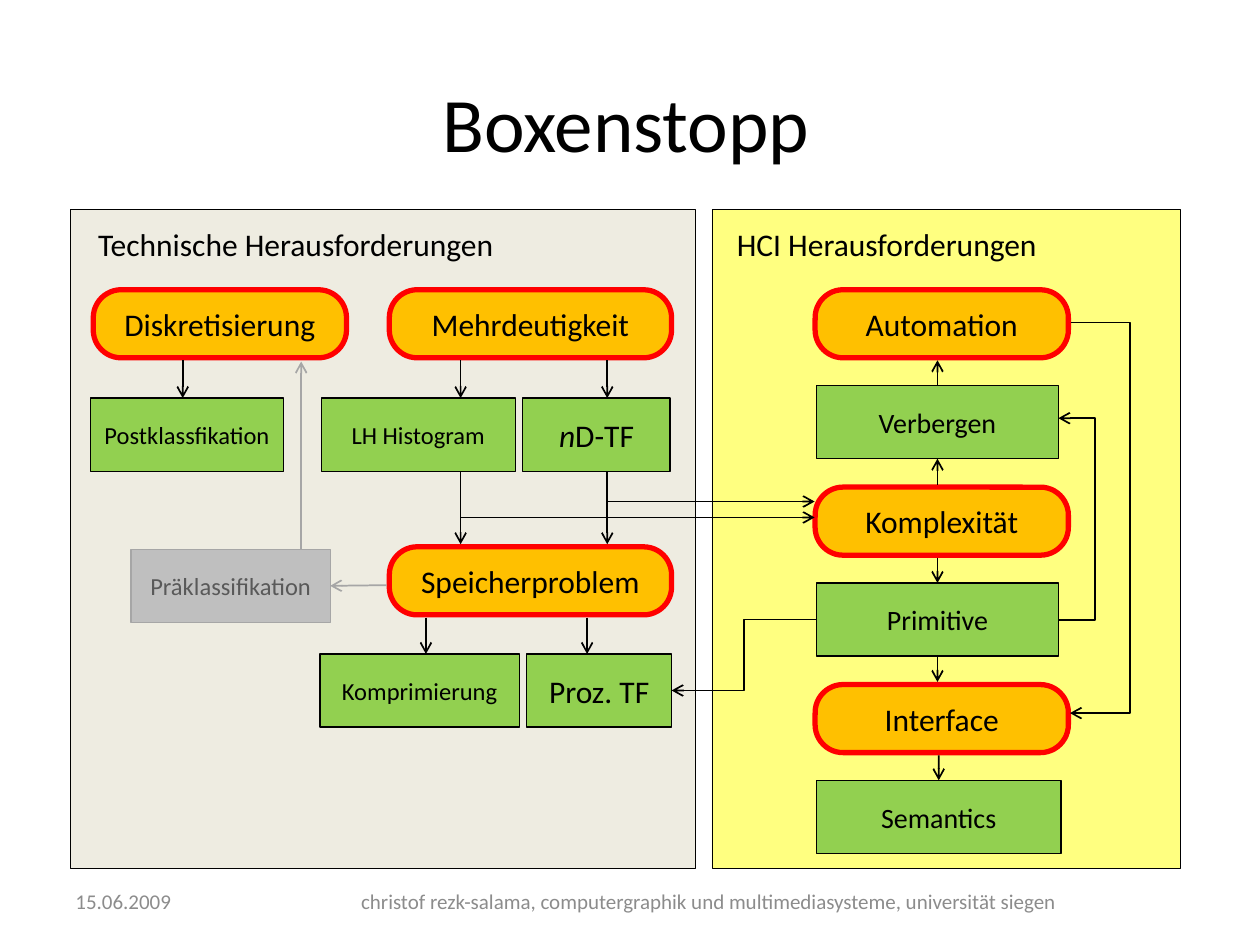
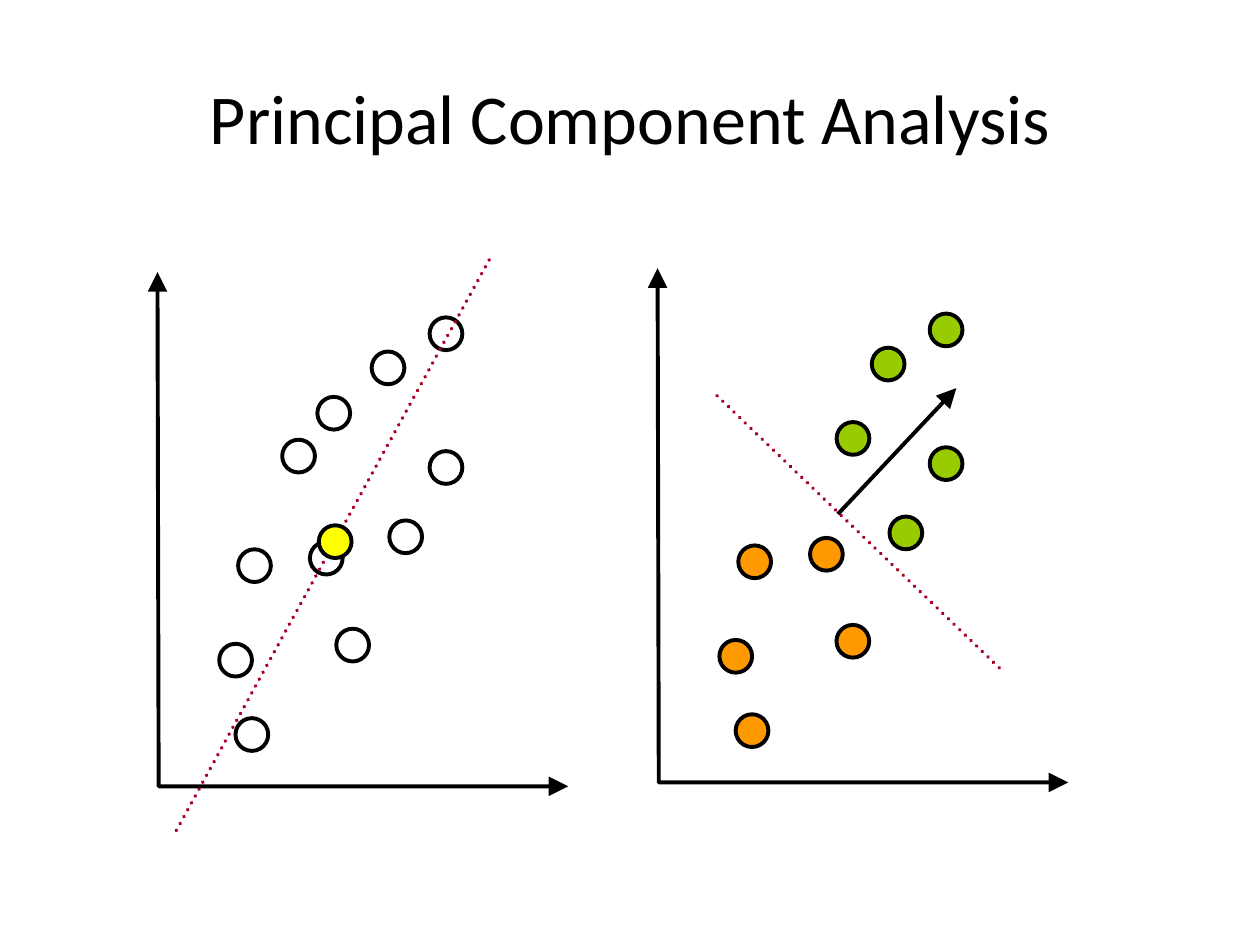
from dataclasses import dataclass
from typing import Optional, Union

from lxml import etree
from pptx import Presentation
from pptx.dml.color import RGBColor
from pptx.enum.dml import MSO_LINE
from pptx.enum.shapes import MSO_CONNECTOR as Conn, MSO_SHAPE as Geo
from pptx.enum.text import MSO_ANCHOR as Anchor, PP_ALIGN as Align
from pptx.oxml.ns import qn
from pptx.util import Pt

FONT = "Calibri"
BLACK = RGBColor(0x00, 0x00, 0x00)
WHITE = RGBColor(0xFF, 0xFF, 0xFF)
RED = RGBColor(0xFF, 0x00, 0x00)
AMBER = RGBColor(0xFF, 0xC0, 0x00)
GREEN = RGBColor(0x92, 0xD0, 0x50)
BEIGE = RGBColor(0xEE, 0xEC, 0xE1)
PALE_YELLOW = RGBColor(0xFF, 0xFF, 0x80)
SILVER = RGBColor(0xBF, 0xBF, 0xBF)
GREY = RGBColor(0xA6, 0xA6, 0xA6)
DARK_GREY = RGBColor(0x59, 0x59, 0x59)
FOOTER_GREY = RGBColor(0x8C, 0x8C, 0x8C)
CRIMSON = RGBColor(0xA5, 0x00, 0x21)
YELLOW = RGBColor(0xFF, 0xFF, 0x00)
LIME = RGBColor(0x99, 0xCC, 0x00)
ORANGE = RGBColor(0xFF, 0x99, 0x00)

TOP, LEFT, BOTTOM, RIGHT = range(4)
Point = tuple[float, float]
Rect = tuple[float, float, float, float]


@dataclass(frozen=True)
class Style:
    geo: Geo
    height: float
    fill: RGBColor
    line: RGBColor
    weight: float
    color: RGBColor = BLACK


PROBLEM = Style(Geo.ROUNDED_RECTANGLE, 38.9, AMBER, RED, 3)
METHOD = Style(Geo.RECTANGLE, 41.8, GREEN, BLACK, 0.75)
FADED = Style(Geo.RECTANGLE, 41.8, SILVER, GREY, 0.75, DARK_GREY)


@dataclass(frozen=True)
class Box:
    text: str
    x: float
    y: float
    w: float
    style: Style
    size: float = 18
    italic: str = ""  # leading letters set in italics


@dataclass(frozen=True)
class Side:
    box: str
    site: int


@dataclass(frozen=True)
class Arrow:
    start: Union[Point, Side]
    end: Union[Point, Side]
    color: RGBColor = BLACK
    kind: Conn = Conn.STRAIGHT


# Rows and columns of the diagram
ROW_1, ROW_2, ROW_3, ROW_4 = 165.6, 227.5, 312.5, 373.7
HCI_X, HCI_MID, HCI_STEP, HCI_METHOD_Y = 466.6, 535.7, 112.8, 220.3
LH_X, ND_X = 263.2, 347

BOXES = [
    Box("Diskretisierung", 53.3, ROW_1, 144.7, PROBLEM),
    Box("Mehrdeutigkeit", 222.5, ROW_1, 161.3, PROBLEM),
    Box("Speicherproblem", 222.5, ROW_3, 161.3, PROBLEM),
    Box("Postklassfikation", 51.8, ROW_2, 110.2, METHOD, 14),
    Box("LH Histogram", 183.6, ROW_2, 110.9, METHOD, 14),
    Box("D-TF", 298.8, ROW_2, 84.2, METHOD, italic="n"),
    Box("Präklassifikation", 74.9, 313.9, 113.8, FADED, 14),
    Box("Komprimierung", 182.9, ROW_4, 113.8, METHOD, 14),
    Box("Proz. TF", 301, ROW_4, 82.8, METHOD),
] + [
    Box(text, 465.8, ROW_1 + i * HCI_STEP, 144.7, PROBLEM)
    for i, text in enumerate(["Automation", "Komplexität", "Interface"])
] + [
    Box(text, HCI_X, HCI_METHOD_Y + i * HCI_STEP, w, METHOD, 16)
    for i, (text, w) in enumerate([("Verbergen", 138.2), ("Primitive", 138.2),
                                   ("Semantics", 139.7)])
]

ARROWS = [
    Arrow((x, y1), (x, y2)) for x, y1, y2 in [
        (104.4, 205.9, ROW_2), (LH_X, 205.9, ROW_2), (ND_X, 205.9, ROW_2),
        (LH_X, 269.3, 311), (ND_X, 269.3, 311),
        (243.4, 353, ROW_4), (335.5, 353, ROW_4)]
] + [
    Arrow((172.1, 313.9), (172.1, 206.6), GREY),
    Arrow((221, 334.4), Side("Präklassifikation", RIGHT), GREY),
    Arrow((ND_X, 286.6), (465.5, 286.6)),
    Arrow((LH_X, 295.7), (465.5, 295.7)),
    Arrow(Side("Verbergen", TOP), (HCI_MID, 205.9)),
    Arrow((HCI_MID, 277), Side("Verbergen", BOTTOM)),
    Arrow((HCI_MID, 318.7), Side("Primitive", TOP)),
    Arrow(Side("Primitive", BOTTOM), (HCI_MID, 389.7)),
    Arrow((536.4, 431.6), Side("Semantics", TOP)),
    Arrow(Side("Primitive", LEFT), Side("Proz. TF", RIGHT), kind=Conn.ELBOW),
]

# Routes around the right of the HCI column
LOOPS: list[list[Point]] = [
    [(612, 184.3), (645.8, 184.3), (645.8, 407.5), (611.5, 407.5)],
    [(604.8, 354.2), (625.7, 354.2), (625.7, 239), (604.8, 239)],
]

# Scatter plots: both share axes and most samples
DOT = 18.7
PLOT_SHIFT: Point = (285.8, -2.2)
AXES: list[Point] = [(90, 155.5), (90.7, 449.3), (324.7, 449.3)]
UPPER: list[Point] = [(212.4, 200.9), (245.5, 181.4), (245.5, 257.8), (222.5, 297.4)]
LOWER: list[Point] = [(177.1, 309.6), (136.1, 313.9), (134.6, 410.4),
                      (125.3, 367.9), (192.2, 359.3)]
LEFT_ONLY: list[Point] = [(181.4, 226.8), (161.3, 251.3)]
RIGHT_ONLY: list[Point] = [(192.3, 243.4)]
MEAN: Point = (182.2, 300.2)


def add_run(p, text: str, size: float, color: RGBColor, italic: bool = False) -> None:
    r = p.add_run()
    r.text = text
    r.font.name, r.font.size, r.font.italic = FONT, Pt(size), italic
    r.font.color.rgb = color


def set_line(sp, color: RGBColor, weight: float, head: Optional[str] = None,
             tail: Optional[str] = None, dotted: bool = False) -> None:
    sp.line.color.rgb = color
    sp.line.width = Pt(weight)
    ln = sp._element.spPr.find(qn("a:ln"))
    if dotted:
        sp.line.dash_style = MSO_LINE.ROUND_DOT
        ln.set("cap", "rnd")
    for tag, end in (("a:headEnd", head), ("a:tailEnd", tail)):
        if end:
            size = "lg" if end == "triangle" else "med"
            etree.SubElement(ln, qn(tag), type=end, w=size, len=size)


def add_title(s, text: str, x: float, y: float, size: float) -> None:
    sp = s.shapes.title
    sp.left, sp.top, sp.width, sp.height = Pt(x), Pt(y), Pt(648), Pt(90)
    sp.text_frame.vertical_anchor = Anchor.MIDDLE
    p = sp.text_frame.paragraphs[0]
    p.alignment = Align.CENTER
    add_run(p, text, size, BLACK)


def add_label(s, text: str, rect: Rect, size: float, color: RGBColor,
              align: Align = Align.LEFT, anchor: Anchor = Anchor.TOP) -> None:
    tf = s.shapes.add_textbox(*map(Pt, rect)).text_frame
    tf.word_wrap, tf.vertical_anchor = True, anchor
    p = tf.paragraphs[0]
    p.alignment = align
    add_run(p, text, size, color)


def add_filled(s, geo: Geo, rect: Rect, fill: RGBColor, line: RGBColor, weight: float):
    sp = s.shapes.add_shape(geo, *map(Pt, rect))
    sp.shadow.inherit = False
    sp.fill.solid()
    sp.fill.fore_color.rgb = fill
    set_line(sp, line, weight)
    return sp


def add_box(s, box: Box):
    st = box.style
    sp = add_filled(s, st.geo, (box.x, box.y, box.w, st.height),
                    st.fill, st.line, st.weight)
    if st.geo == Geo.ROUNDED_RECTANGLE:
        sp.adjustments[0] = 0.41
    tf = sp.text_frame
    tf.margin_left = tf.margin_right = Pt(2)
    tf.word_wrap, tf.vertical_anchor = True, Anchor.MIDDLE
    p = tf.paragraphs[0]
    p.alignment = Align.CENTER
    if box.italic:
        add_run(p, box.italic, box.size, st.color, italic=True)
    add_run(p, box.text, box.size, st.color)
    return sp


def add_line(s, start: Point, end: Point, kind: Conn = Conn.STRAIGHT):
    c = s.shapes.add_connector(kind, *map(Pt, (*start, *end)))
    etree.SubElement(c._element.spPr, qn("a:effectLst"))
    return c


def add_arrow(s, arrow: Arrow, shapes: dict) -> None:
    start, end = (e if isinstance(e, tuple) else (0, 0) for e in (arrow.start, arrow.end))
    c = add_line(s, start, end, arrow.kind)
    if isinstance(arrow.start, Side):
        c.begin_connect(shapes[arrow.start.box], arrow.start.site)
    if isinstance(arrow.end, Side):
        c.end_connect(shapes[arrow.end.box], arrow.end.site)
    set_line(c, arrow.color, 1, tail="arrow")


def add_path(s, points: list[Point], weight: float, tail: str,
             head: Optional[str] = None) -> None:
    pts = [(Pt(x), Pt(y)) for x, y in points]
    fb = s.shapes.build_freeform(*pts[0])
    fb.add_line_segments(pts[1:], close=False)
    sp = fb.convert_to_shape()
    sp.shadow.inherit = False
    sp.fill.background()
    set_line(sp, BLACK, weight, head, tail)


def add_dots(s, points: list[Point], fill: RGBColor, shift: Point = (0, 0)) -> None:
    for x, y in points:
        add_filled(s, Geo.OVAL, (x + shift[0], y + shift[1], DOT, DOT), fill, BLACK, 2.25)


def add_axes(s, shift: Point = (0, 0)) -> None:
    add_path(s, [(x + shift[0], y + shift[1]) for x, y in AXES],
             2.25, "triangle", "triangle")


def add_dotted(s, start: Point, end: Point) -> None:
    set_line(add_line(s, start, end), CRIMSON, 2.25, dotted=True)


def build_overview(s) -> None:
    add_title(s, "Boxenstopp", 33.8, 24.5, 44)
    # Footer
    add_label(s, "15.06.2009", (36, 500.4, 138.2, 28.8), 12, FOOTER_GREY,
              anchor=Anchor.MIDDLE)
    add_label(s, "christof rezk-salama, computergraphik und multimediasysteme, "
              "universität siegen", (180, 500.4, 450, 28.8), 12, FOOTER_GREY,
              Align.CENTER, Anchor.MIDDLE)
    # Panels with headings
    for text, x, w, text_x, fill in [
            ("Technische Herausforderungen", 40.3, 357.1, 49, BEIGE),
            ("HCI Herausforderungen", 406.8, 267.8, 414, PALE_YELLOW)]:
        add_filled(s, Geo.RECTANGLE, (x, 119.5, w, 376.6), fill, BLACK, 0.25)
        add_label(s, text, (text_x, 125.3, w - 20, 28.8), 18, BLACK)
    # Boxes, then the arrows between them
    shapes = {box.text: add_box(s, box) for box in BOXES}
    for arrow in ARROWS:
        add_arrow(s, arrow, shapes)
    for loop in LOOPS:
        add_path(s, loop, 1, "arrow")


def build_pca(s) -> None:
    add_title(s, "Principal Component Analysis", 36, 21.6, 40)
    # Left plot: samples, main axis and mean
    add_dots(s, UPPER + LOWER + LEFT_ONLY, WHITE)
    add_axes(s)
    add_dotted(s, (100.8, 474.5), (280.8, 146.2))
    add_dots(s, [MEAN], YELLOW)
    # Right plot: two classes, dividing line and its normal
    add_axes(s, PLOT_SHIFT)
    add_dotted(s, (571, 381.6), (409, 225.4))
    add_dots(s, UPPER + RIGHT_ONLY, LIME, PLOT_SHIFT)
    add_dots(s, LOWER, ORANGE, PLOT_SHIFT)
    normal = add_line(s, (478.8, 293.8), (546.5, 221.8))
    set_line(normal, BLACK, 2.25, tail="triangle")


def main() -> None:
    prs = Presentation()
    prs.slide_width, prs.slide_height = Pt(720), Pt(540)
    title_only = prs.slide_layouts[5]
    for build in (build_overview, build_pca):
        build(prs.slides.add_slide(title_only))
    prs.save("out.pptx")


if __name__ == "__main__":
    main()
